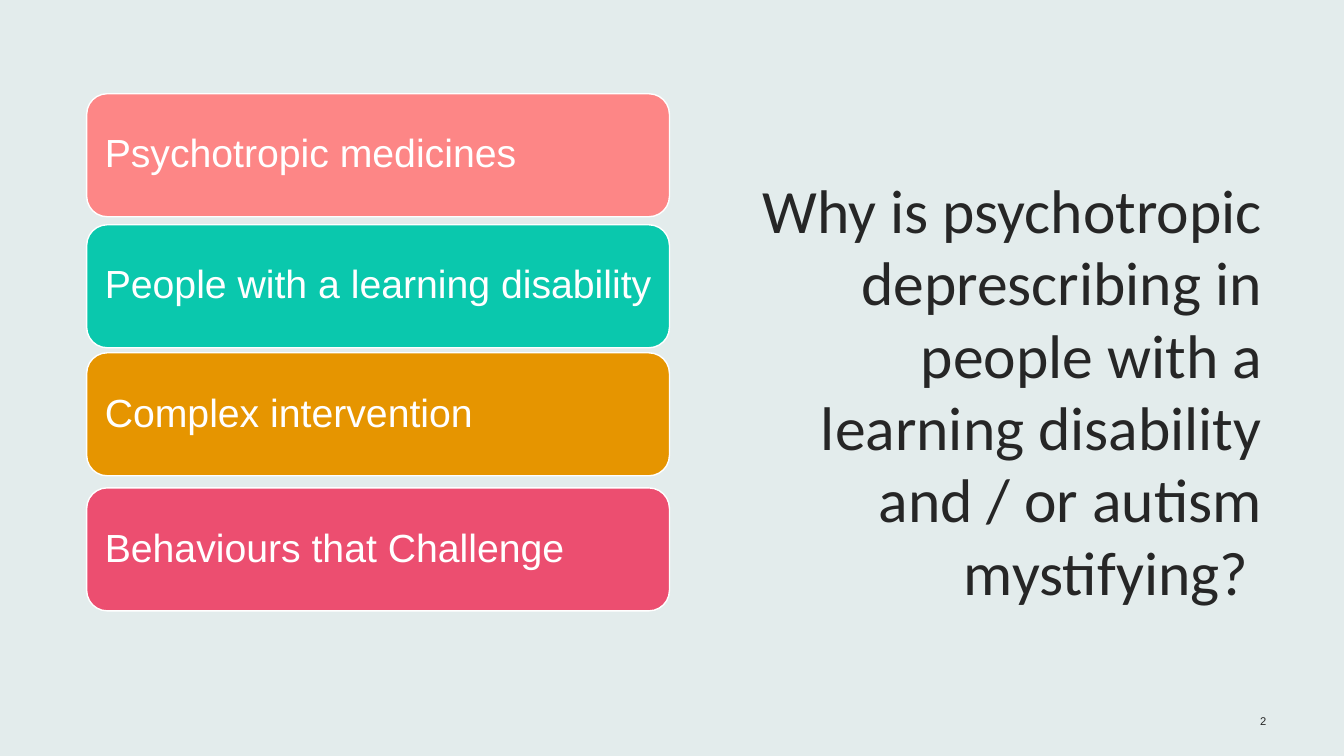
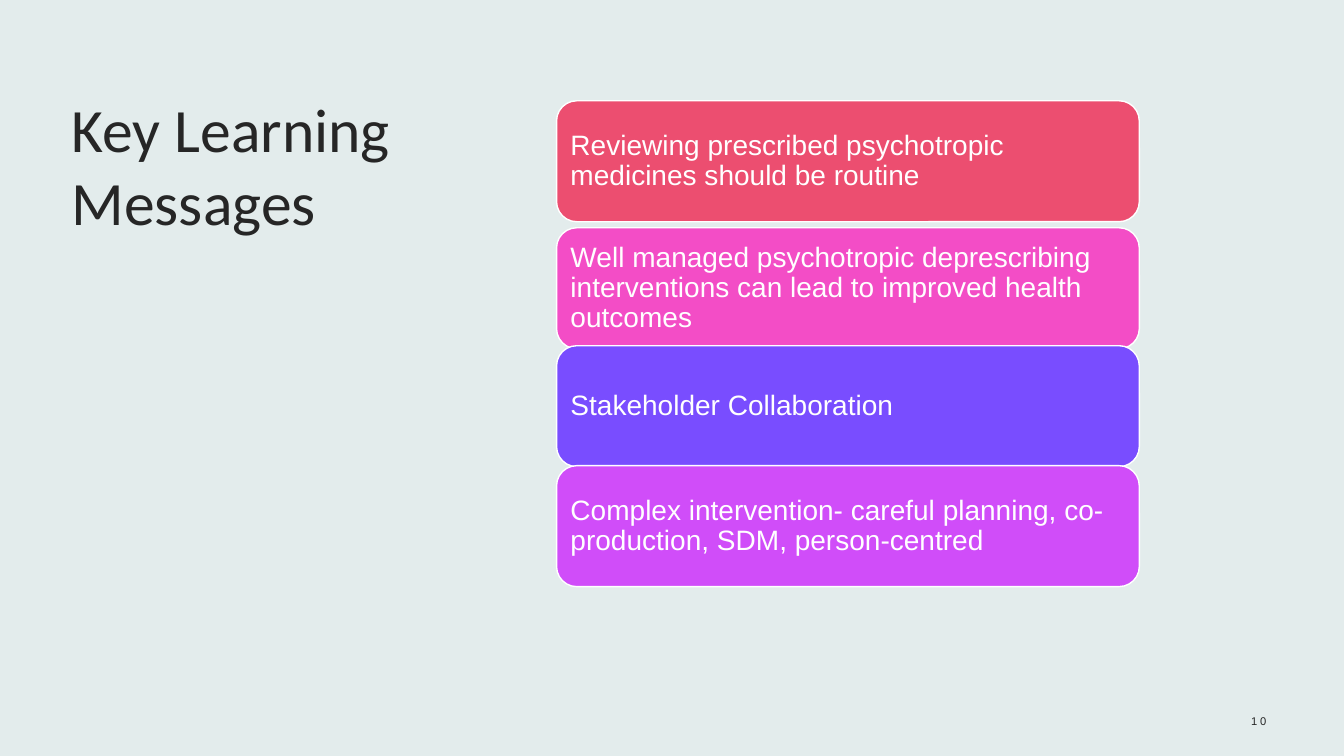
"""Build two slides of stacked message cards beside a title."""
from dataclasses import dataclass

from pptx import Presentation
from pptx.dml.color import RGBColor
from pptx.enum.shapes import MSO_SHAPE as Shape
from pptx.enum.text import MSO_ANCHOR as Anchor, MSO_AUTO_SIZE as Fit, PP_ALIGN as Align
from pptx.util import Emu, Pt

PX = 9144
PAGE = (1333, 750)
BACK, INK, WHITE = "E3ECEC", "262626", "FFFFFF"
HEAD, BODY = "Calibri", "Arial"
CARD_W = 578


@dataclass(frozen=True)
class Box:
    left: int
    top: int
    width: int
    height: int


@dataclass(frozen=True)
class Card:
    text: str
    fill: str
    top: int


@dataclass(frozen=True)
class Stack:
    left: int
    height: int
    size: int
    inset: int
    cards: tuple[Card, ...]


@dataclass(frozen=True)
class Page:
    title: str
    box: Box
    align: Align
    anchor: Anchor
    number: str
    stack: Stack


NUM_BOX = Box(1108, 695, 158, 40)

PAGES = (
    Page(
        "Why is psychotropic deprescribing in people with a learning disability "
        "and / or autism mystifying? ",
        Box(744, 90, 518, 520), Align.RIGHT, Anchor.BOTTOM, "2",
        Stack(86, 122, 28, 12, (
            Card("Psychotropic medicines", "FD8686", 93),
            Card("People with a learning disability", "0AC8AD", 223),
            Card("Complex intervention", "E69500", 350),
            Card("Behaviours that Challenge", "EC4E70", 484),
        )),
    ),
    Page(
        "Key Learning Messages",
        Box(61, 89, 405, 592), Align.LEFT, Anchor.TOP, "10",
        Stack(552, 120, 20, 8, (
            Card("Reviewing prescribed psychotropic medicines should be routine",
                 "EC4E70", 100),
            Card("Well managed psychotropic deprescribing interventions can lead "
                 "to improved health outcomes", "F34DC6", 226),
            Card("Stakeholder Collaboration", "794DFF", 343),
            Card("Complex intervention- careful planning, co-production, SDM, "
                 "person-centred", "D04DF9", 462),
        )),
    ),
)


def px(count: int) -> Emu:
    """Turn px into EMU."""
    return Emu(count * PX)


def paint(target, color: str) -> None:
    """Give a fill a solid colour."""
    target.solid()
    target.fore_color.rgb = RGBColor.from_string(color)


def place(shape, box: Box) -> None:
    """Move and size a shape."""
    shape.left, shape.top = px(box.left), px(box.top)
    shape.width, shape.height = px(box.width), px(box.height)


def write(shape, text: str, *, size: int, font: str = BODY, color: str = INK,
          align: Align = Align.LEFT, anchor: Anchor = Anchor.MIDDLE,
          lead: float = 1.0, track: int = 0) -> None:
    """Put one formatted paragraph into a shape."""
    frame = shape.text_frame
    frame.word_wrap = True
    frame.auto_size = Fit.NONE
    frame.vertical_anchor = anchor
    para = frame.paragraphs[0]
    para.alignment = align
    para.line_spacing = lead
    run = para.add_run()
    run.text = text
    run.font.size = Pt(size)
    run.font.name = font
    run.font.color.rgb = RGBColor.from_string(color)
    if track:
        run._r.get_or_add_rPr().set("spc", str(track * 100))


def add_card(slide, stack: Stack, card: Card) -> None:
    """Draw one rounded card with its text."""
    shape = slide.shapes.add_shape(
        Shape.ROUNDED_RECTANGLE, px(stack.left), px(card.top), px(CARD_W), px(stack.height))
    shape.shadow.inherit = False
    paint(shape.fill, card.fill)
    paint(shape.line.fill, WHITE)
    shape.line.width = Pt(1)
    frame = shape.text_frame
    frame.margin_left = frame.margin_top = frame.margin_bottom = px(stack.inset)
    frame.margin_right = px(stack.inset // 2)
    write(shape, card.text, size=stack.size, color=WHITE, lead=0.9)


def add_page(deck, page: Page) -> None:
    """Add a slide with title, number and cards."""
    slide = deck.slides.add_slide(deck.slide_layouts[5])
    title = slide.shapes.title
    place(title, page.box)
    write(title, page.title, size=44, font=HEAD, align=page.align,
          anchor=page.anchor, lead=0.98)
    box = NUM_BOX
    num = slide.shapes.add_textbox(px(box.left), px(box.top), px(box.width), px(box.height))
    write(num, page.number, size=8, align=Align.RIGHT, track=2)
    for card in page.stack.cards:
        add_card(slide, page.stack, card)


def main() -> None:
    """Build and save the deck."""
    deck = Presentation()
    deck.slide_width, deck.slide_height = map(px, PAGE)
    paint(deck.slide_master.background.fill, BACK)
    for page in PAGES:
        add_page(deck, page)
    deck.save("out.pptx")


if __name__ == "__main__":
    main()
